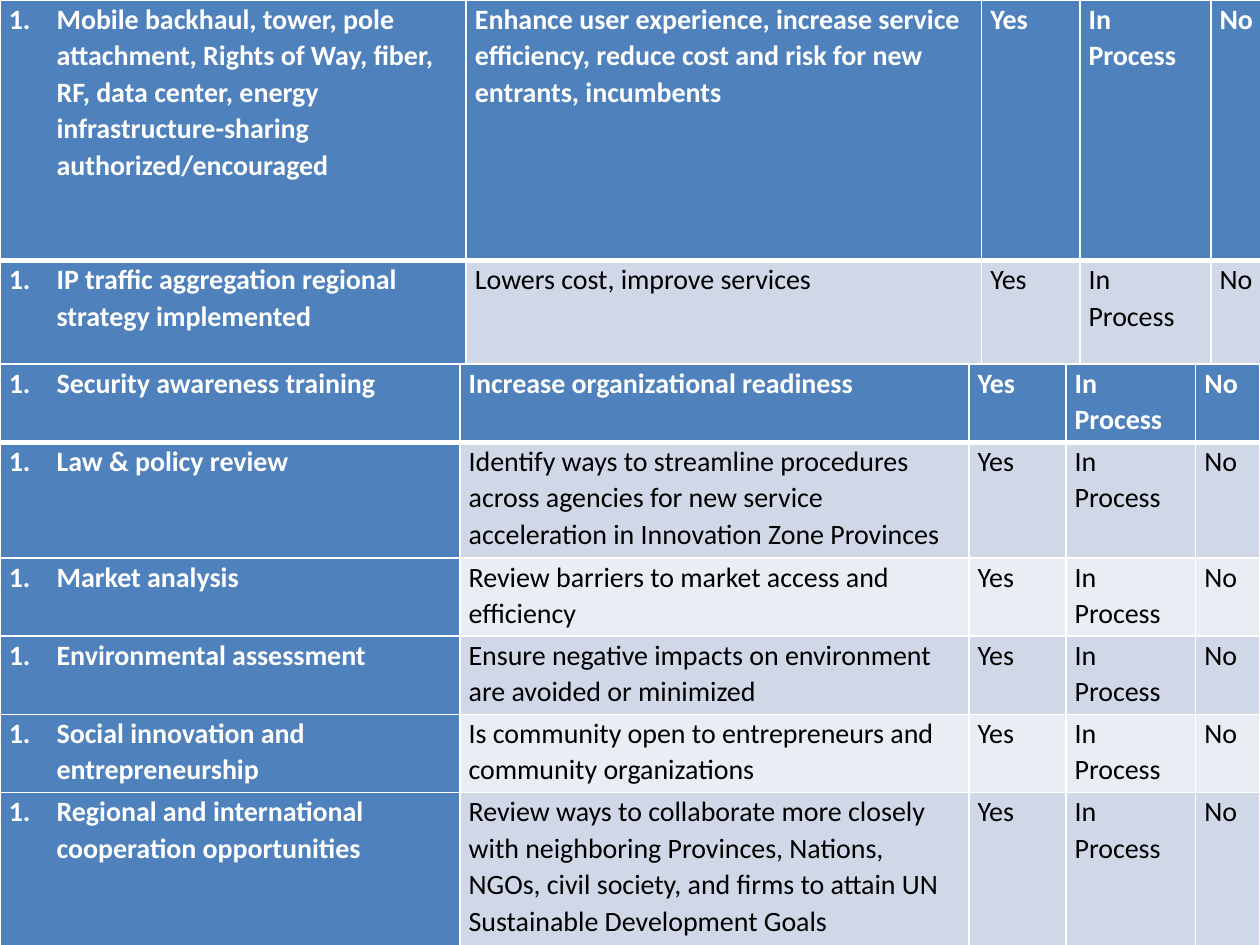
from dataclasses import dataclass

from lxml.etree import SubElement
from pptx import Presentation
from pptx.dml.color import RGBColor
from pptx.oxml.ns import qn
from pptx.util import Inches, Pt


@dataclass(frozen=True)
class Theme:
    font: str = "Calibri"
    size: int = 16
    accent: str = "4F81BD"
    bands: tuple = ("E9EDF4", "D0D8E8")
    light: str = "FFFFFF"
    dark: str = "000000"
    rule: int = 1
    header_rule: int = 3
    line_spacing: float = 1.07
    side_margin: float = 0.07
    number_indent: float = 0.38


THEME = Theme()
SLIDE_WIDTH, SLIDE_HEIGHT = 10, 7.5
STATUSES = ("Yes", "In Process", "No")

INFRASTRUCTURE = [
    ("Mobile backhaul, tower, pole attachment, Rights of Way, fiber, RF, data center, "
     "energy infrastructure-sharing authorized/encouraged",
     "Enhance user experience, increase service efficiency, reduce cost and risk "
     "for new entrants, incumbents"),
    ("IP traffic aggregation regional strategy implemented",
     "Lowers cost, improve services"),
]
READINESS = [
    ("Security awareness training", "Increase organizational readiness"),
    ("Law & policy review",
     "Identify ways to streamline procedures across agencies for new service "
     "acceleration in Innovation Zone Provinces"),
    ("Market analysis", "Review barriers to market access and efficiency"),
    ("Environmental assessment",
     "Ensure negative impacts on environment are avoided or minimized"),
    ("Social innovation and entrepreneurship",
     "Is community open to entrepreneurs and community organizations"),
    ("Regional and international cooperation opportunities",
     "Review ways to collaborate more closely with neighboring Provinces, Nations, "
     "NGOs, civil society, and firms to attain UN Sustainable Development Goals"),
]
INFRASTRUCTURE_COLUMNS = (3.7, 4.09, 0.78, 1.04, 0.51)
INFRASTRUCTURE_ROWS = (2.07, 0.82)
READINESS_COLUMNS = (3.65, 4.04, 0.77, 1.03, 0.51)
READINESS_ROWS = (0.62, 0.92, 0.62, 0.62, 0.62, 1.23)


def number_paragraph(paragraph):
    properties = paragraph._p.get_or_add_pPr()
    indent = Inches(THEME.number_indent)
    properties.set("marL", str(indent))
    properties.set("indent", str(-indent))
    SubElement(properties, qn("a:buFont"), typeface="+mj-lt")
    SubElement(properties, qn("a:buAutoNum"), type="arabicPeriod")


def rule_cell(cell, row):
    weights = {
        "L": THEME.rule,
        "R": THEME.rule,
        "T": THEME.header_rule if row == 1 else THEME.rule,
        "B": THEME.header_rule if row == 0 else THEME.rule,
    }
    properties = cell._tc.get_or_add_tcPr()
    for side, weight in weights.items():
        border = SubElement(properties, qn(f"a:ln{side}"), w=str(Pt(weight)))
        fill = SubElement(border, qn("a:solidFill"))
        SubElement(fill, qn("a:srgbClr"), val=THEME.light)


def fill_cell(cell, wording, row, column):
    emphasized = row == 0 or column == 0
    cell.margin_left = cell.margin_right = Inches(THEME.side_margin)
    cell.margin_top = cell.margin_bottom = 0
    rule_cell(cell, row)
    cell.fill.solid()
    background = THEME.accent if emphasized else THEME.bands[row % 2]
    cell.fill.fore_color.rgb = RGBColor.from_string(background)

    cell.text_frame.text = wording
    paragraph = cell.text_frame.paragraphs[0]
    paragraph.line_spacing = THEME.line_spacing
    if column == 0:
        number_paragraph(paragraph)
    font = paragraph.runs[0].font
    font.name = THEME.font
    font.size = Pt(THEME.size)
    font.bold = emphasized
    font.color.rgb = RGBColor.from_string(THEME.light if emphasized else THEME.dark)


def add_checklist(slide, top, widths, heights, criteria):
    checklist = slide.shapes.add_table(
        len(heights), len(widths), 0, Inches(top),
        Inches(sum(widths)), Inches(sum(heights))).table
    for column, width in zip(checklist.columns, widths):
        column.width = Inches(width)
    for row, height in zip(checklist.rows, heights):
        row.height = Inches(height)
    for row, criterion in enumerate(criteria):
        for column, wording in enumerate(criterion + STATUSES):
            fill_cell(checklist.cell(row, column), wording, row, column)
    return checklist


def main():
    presentation = Presentation()
    presentation.slide_width = Inches(SLIDE_WIDTH)
    presentation.slide_height = Inches(SLIDE_HEIGHT)
    slide = presentation.slides.add_slide(presentation.slide_layouts[6])
    add_checklist(slide, sum(INFRASTRUCTURE_ROWS), READINESS_COLUMNS,
                  READINESS_ROWS, READINESS)
    infrastructure = add_checklist(slide, 0, INFRASTRUCTURE_COLUMNS,
                                   INFRASTRUCTURE_ROWS, INFRASTRUCTURE)
    infrastructure.cell(0, 1).text_frame.paragraphs[0].space_after = Pt(8)
    presentation.save("out.pptx")


if __name__ == "__main__":
    main()
